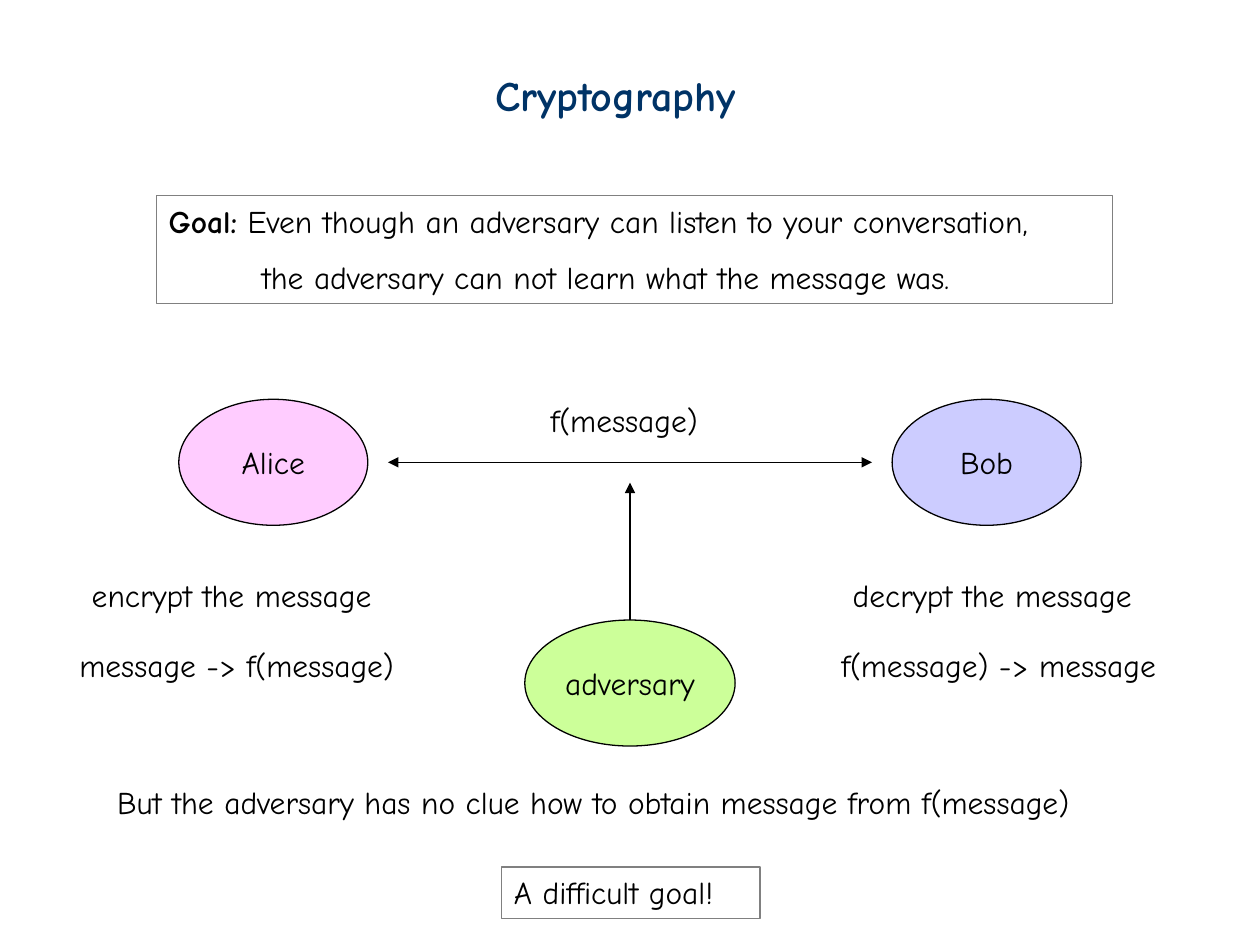
"""Build the slide on the goal of cryptography."""
from lxml import etree
from pptx import Presentation
from pptx.dml.color import RGBColor
from pptx.enum.shapes import MSO_CONNECTOR, MSO_SHAPE
from pptx.enum.text import MSO_ANCHOR, PP_ALIGN
from pptx.oxml.ns import qn
from pptx.util import Cm, Pt

OVAL, RECTANGLE = MSO_SHAPE.OVAL, MSO_SHAPE.RECTANGLE
STRAIGHT = MSO_CONNECTOR.STRAIGHT
TOP, MIDDLE = MSO_ANCHOR.TOP, MSO_ANCHOR.MIDDLE
LEFT, CENTER = PP_ALIGN.LEFT, PP_ALIGN.CENTER

THEME = {
    "font": "Comic Neue",
    "title_size": 24,
    "body_size": 18,
    "line_width": 0.75,
    "title": "003366",
    "ink": "000000",
    "frame": "808080",
    "alice": "FFCCFF",
    "bob": "CCCCFF",
    "adversary": "CCFF99",
}

TITLE = ("Cryptography", (9.73, 1.27, 5.94, 1.27))
GOAL_LABEL = "Goal:"
GOAL_LINES = (
    " Even though an adversary can listen to your conversation,",
    "the adversary can not learn what the message was.",
)
GOAL_BOX = (3.15, 3.94, 19.28, 2.18)
GOAL_INDENT = 1.88
CONCLUSION = ("A difficult goal!", (10.11, 17.48, 5.21, 1.04))

PAGE_CENTER = 12.7
PARTY_OFFSET = 7.19
PARTY_HEIGHT = 2.54
CHANNEL_Y = 9.32
CHANNEL_HALF = 4.88
ADVERSARY_Y = 13.77
LISTEN_Y = 9.73
PARTIES = (
    ("Alice", "alice", PAGE_CENTER - PARTY_OFFSET, CHANNEL_Y, 3.81),
    ("Bob", "bob", PAGE_CENTER + PARTY_OFFSET, CHANNEL_Y, 3.81),
    ("adversary", "adversary", PAGE_CENTER, ADVERSARY_Y, 4.24),
)

CAPTION_HEIGHT = 1.02
CAPTIONS = (
    ("f(message)", 10.85, 7.95, 3.76),
    ("encrypt the message", 1.6, 11.48, 6.65),
    ("decrypt the message", 16.94, 11.48, 6.71),
    ("message -> f(message)", 1.35, 12.9, 7.14),
    ("f(message) -> message", 16.71, 12.9, 7.14),
    ("But the adversary has no clue how to obtain message from f(message)", 2.11, 15.67, 21.21),
)


def color(name):
    return RGBColor.from_string(THEME[name])


def write(paragraph, text, *, size="body_size", ink="ink", bold=False):
    run = paragraph.add_run()
    run.text = text
    run.font.name = THEME["font"]
    run.font.size = Pt(THEME[size])
    run.font.bold = bold
    run.font.color.rgb = color(ink)


def add_text(slide, text, box, **text_format):
    frame = slide.shapes.add_textbox(*map(Cm, box)).text_frame
    frame.word_wrap = True
    write(frame.paragraphs[0], text, **text_format)


def add_outlined(slide, kind, box, *, fill=None, line="ink", anchor=TOP, align=LEFT, wrap=True):
    shape = slide.shapes.add_shape(kind, *map(Cm, box))
    shape.shadow.inherit = False
    if fill:
        shape.fill.solid()
        shape.fill.fore_color.rgb = color(fill)
    else:
        shape.fill.background()
    shape.line.color.rgb = color(line)
    shape.line.width = Pt(THEME["line_width"])
    frame = shape.text_frame
    frame.word_wrap = wrap
    frame.vertical_anchor = anchor
    frame.paragraphs[0].alignment = align
    return frame


def add_arrow(slide, start, end, ends):
    connector = slide.shapes.add_connector(STRAIGHT, *map(Cm, start + end))
    connector.line.color.rgb = color("ink")
    connector.line.width = Pt(THEME["line_width"])
    outline = connector.line._get_or_add_ln()
    for name in ends:
        etree.SubElement(outline, qn(f"a:{name}"), type="triangle")
    etree.SubElement(connector._element.spPr, qn("a:effectLst"))


def add_goal(slide):
    frame = add_outlined(slide, RECTANGLE, GOAL_BOX, line="frame")
    first_line, second_line = GOAL_LINES
    write(frame.paragraphs[0], GOAL_LABEL, bold=True)
    write(frame.paragraphs[0], first_line)
    paragraph = frame.add_paragraph()
    paragraph.alignment = LEFT
    paragraph.line_spacing = 1.5
    paragraph._p.get_or_add_pPr().set("marL", str(Cm(GOAL_INDENT)))
    write(paragraph, second_line)


def add_parties(slide):
    for name, fill, center_x, center_y, width in PARTIES:
        box = (center_x - width / 2, center_y - PARTY_HEIGHT / 2, width, PARTY_HEIGHT)
        frame = add_outlined(slide, OVAL, box, fill=fill, anchor=MIDDLE, align=CENTER, wrap=False)
        write(frame.paragraphs[0], name)
    add_arrow(slide, (PAGE_CENTER - CHANNEL_HALF, CHANNEL_Y),
              (PAGE_CENTER + CHANNEL_HALF, CHANNEL_Y), ("headEnd", "tailEnd"))
    add_arrow(slide, (PAGE_CENTER, ADVERSARY_Y - PARTY_HEIGHT / 2),
              (PAGE_CENTER, LISTEN_Y), ("tailEnd",))


def main():
    presentation = Presentation()
    presentation.slide_width, presentation.slide_height = Cm(25.4), Cm(19.05)
    slide = presentation.slides.add_slide(presentation.slide_layouts[6])
    add_text(slide, *TITLE, size="title_size", ink="title", bold=True)
    add_goal(slide)
    add_parties(slide)
    for text, left, top, width in CAPTIONS:
        add_text(slide, text, (left, top, width, CAPTION_HEIGHT))
    text, box = CONCLUSION
    write(add_outlined(slide, RECTANGLE, box, line="frame").paragraphs[0], text)
    presentation.save("out.pptx")


if __name__ == "__main__":
    main()
